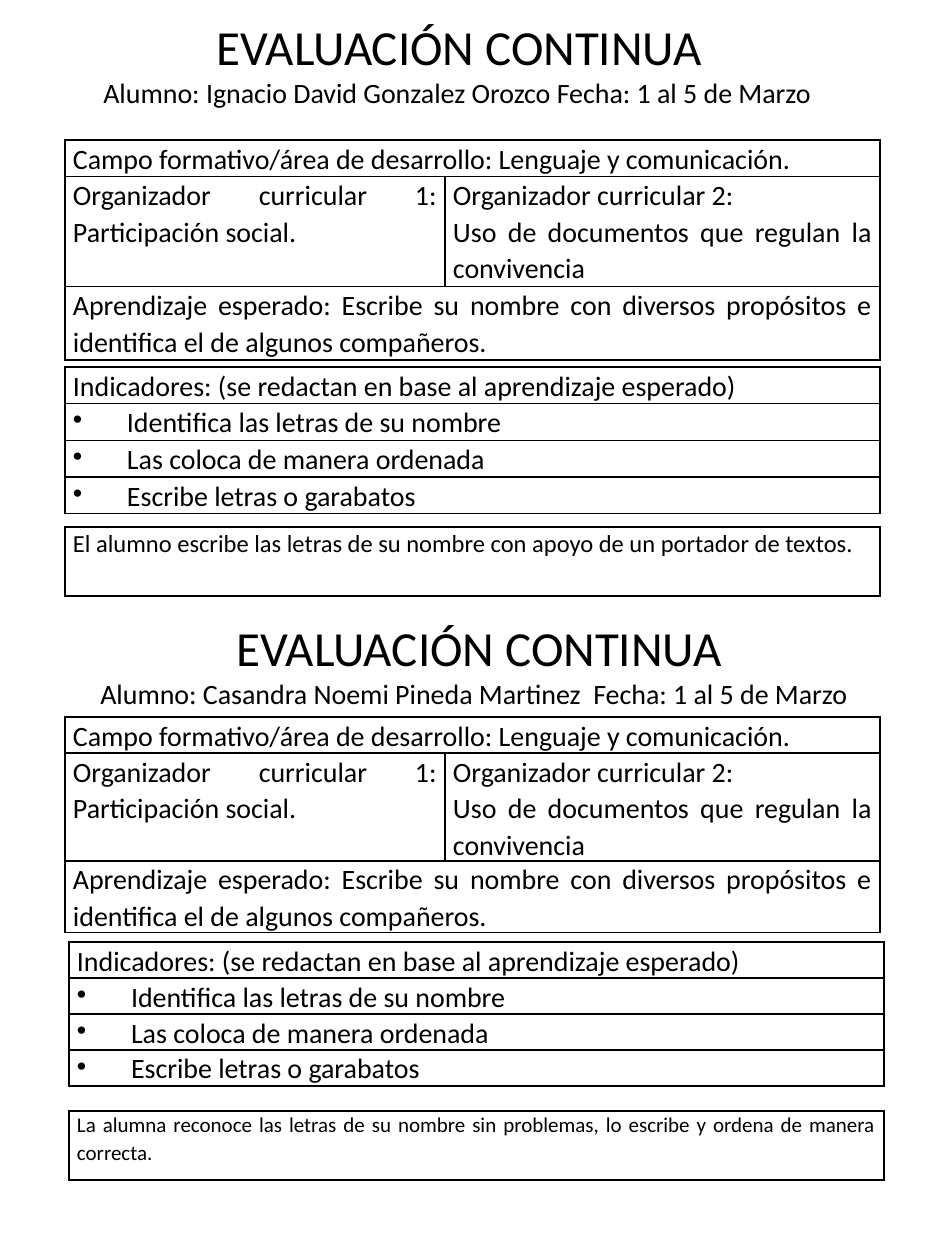
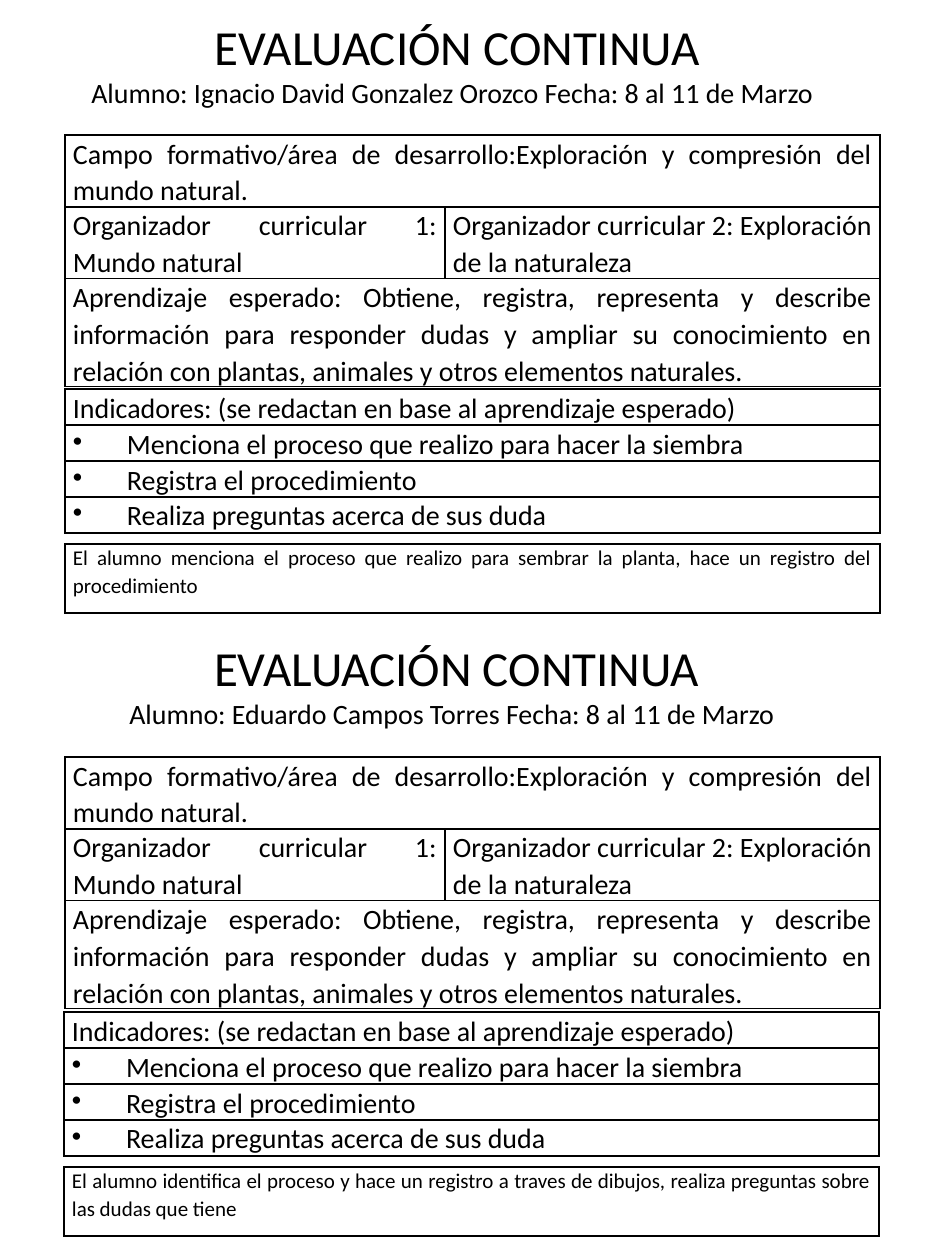
from dataclasses import dataclass

from lxml.etree import SubElement
from pptx import Presentation
from pptx.dml.color import RGBColor
from pptx.enum.text import MSO_ANCHOR, PP_ALIGN
from pptx.oxml import parse_xml
from pptx.oxml.ns import nsdecls, qn
from pptx.util import Pt

PX = 7257.14
BLACK = RGBColor(0, 0, 0)
FONT = "Calibri"
TITLE = "EVALUACIÓN CONTINUA"
TITLE_HEIGHT = 144
COLUMNS = [380, 435]
TABLE_WIDTH = sum(COLUMNS)
FIELD_LEFT = 65
FIELD_ROW, INDICATOR_ROW, NOTE_ROW = 21, 23, 69
INDICATOR_HEIGHT = 137
CELL_MARGIN = 8
BULLET_INDENT = 54
INDICATOR_HEADING = "Indicadores: (se redactan en base al aprendizaje esperado)"


@dataclass
class Lesson:
    """The wording shared by the evaluations of one week."""

    field: str
    organizers: list
    learning: str
    indicators: list
    field_height: int
    dates: str


@dataclass
class Evaluation:
    """One pupil's sheet and the places of its parts."""

    pupil: str
    note: str
    note_size: int
    title_box: tuple
    field_top: int
    indicator_at: tuple
    note_top: int


LANGUAGE = Lesson(
    "Campo formativo/área de desarrollo: Lenguaje y comunicación. ",
    [
        "Organizador curricular 1: Participación social.",
        "Organizador curricular 2:\nUso de documentos que regulan la convivencia",
    ],
    "Aprendizaje esperado: Escribe su nombre con diversos propósitos e "
    "identifica el de algunos compañeros.",
    [
        "Identifica las letras de su nombre",
        "Las coloca de manera ordenada",
        "Escribe letras o garabatos",
    ],
    210,
    "Fecha: 1 al 5 de Marzo",
)
NATURE = Lesson(
    "Campo formativo/área de desarrollo:Exploración y compresión del mundo natural. ",
    [
        "Organizador curricular 1: Mundo natural",
        "Organizador curricular 2: Exploración de la naturaleza",
    ],
    "Aprendizaje esperado: Obtiene, registra, representa y describe información "
    "para responder dudas y ampliar su conocimiento en relación con plantas, "
    "animales y otros elementos naturales. ",
    [
        "Menciona el proceso que realizo para hacer la siembra",
        "Registra el procedimiento",
        "Realiza preguntas acerca de sus duda",
    ],
    247,
    "Fecha: 8 al 11 de Marzo",
)
SHEETS = [
    (LANGUAGE, [
        Evaluation(
            "Ignacio David Gonzalez Orozco ",
            "El alumno escribe las letras de su nombre con apoyo de un portador de textos.",
            14, (91, 10, 736), 140, (65, 367), 527,
        ),
        Evaluation(
            "Casandra Noemi Pineda Martinez  ",
            "La alumna reconoce las letras de su nombre sin problemas, lo escribe y "
            "ordena de manera correcta. ",
            12, (88, 611, 782), 717, (69, 942), 1111,
        ),
    ]),
    (NATURE, [
        Evaluation(
            "Ignacio David Gonzalez Orozco ",
            "El alumno menciona el proceso que realizo para sembrar la planta, hace "
            "un registro del procedimiento",
            12, (79, 10, 756), 135, (65, 389), 544,
        ),
        Evaluation(
            "Eduardo Campos Torres ",
            "El alumno identifica el proceso y hace un registro a traves de dibujos, "
            "realiza preguntas sobre las dudas que tiene",
            12, (117, 631, 679), 757, (64, 1012), 1167,
        ),
    ]),
]


def px(length):
    """Turn pixels into EMU."""
    return round(length * PX)


def format_runs(paragraph, size):
    """Give every run of a paragraph the common font."""
    for run in paragraph.runs:
        run.font.name = FONT
        run.font.size = Pt(size)
        run.font.color.rgb = BLACK


def add_borders(cell):
    """Draw a thin black line on each side of a cell."""
    properties = cell._tc.get_or_add_tcPr()
    for index, side in enumerate(("lnL", "lnR", "lnT", "lnB")):
        line = parse_xml(
            f'<a:{side} {nsdecls("a")} w="12700"><a:solidFill>'
            f'<a:srgbClr val="{BLACK}"/></a:solidFill></a:{side}>'
        )
        properties.insert(index, line)


def add_bullet(paragraph):
    """Put a hanging bullet before a paragraph."""
    properties = paragraph._p.get_or_add_pPr()
    properties.set("marL", str(px(BULLET_INDENT)))
    properties.set("indent", str(-px(BULLET_INDENT)))
    SubElement(properties, qn("a:buChar"), char="•")


def fill_cell(cell, text, size=16):
    """Write justified text in a cell."""
    cell.text_frame.text = text
    for paragraph in cell.text_frame.paragraphs:
        paragraph.alignment = PP_ALIGN.JUSTIFY
        paragraph.line_spacing = 1.07
        format_runs(paragraph, size)


def add_grid(slide, left, top, height, columns, row_count, row_height):
    """Add an unfilled table with black borders."""
    frame = slide.shapes.add_table(
        row_count, len(columns), px(left), px(top), px(TABLE_WIDTH), px(height)
    )
    table = frame.table
    table.first_row = table.horz_banding = False
    for column, width in zip(table.columns, columns):
        column.width = px(width)
    for row in table.rows:
        row.height = px(row_height)
    frame.height = px(height)
    for cell in table.iter_cells():
        cell.margin_left = cell.margin_right = px(CELL_MARGIN)
        cell.margin_top = cell.margin_bottom = 0
        cell.fill.background()
        add_borders(cell)
    return table


def add_heading(slide, box, pupil_line):
    """Add the sheet title with the pupil and the dates below."""
    left, top, width = box
    shape = slide.shapes.add_textbox(px(left), px(top), px(width), px(TITLE_HEIGHT))
    text_frame = shape.text_frame
    text_frame.word_wrap = False
    text_frame.vertical_anchor = MSO_ANCHOR.TOP
    text_frame.text = f"{TITLE}\n{pupil_line}"
    title, pupil = text_frame.paragraphs
    title.alignment = PP_ALIGN.CENTER
    format_runs(title, 28)
    format_runs(pupil, 16)


def add_field_table(slide, lesson, top):
    """Add the table of field, organizers and expected learning."""
    table = add_grid(
        slide, FIELD_LEFT, top, lesson.field_height, COLUMNS, 3, FIELD_ROW
    )
    for row, text in ((0, lesson.field), (2, lesson.learning)):
        table.cell(row, 0).merge(table.cell(row, 1))
        fill_cell(table.cell(row, 0), text)
    for column, text in enumerate(lesson.organizers):
        fill_cell(table.cell(1, column), text)


def add_indicator_table(slide, indicators, left, top):
    """Add the table of bulleted indicators."""
    table = add_grid(
        slide, left, top, INDICATOR_HEIGHT, [TABLE_WIDTH],
        len(indicators) + 1, INDICATOR_ROW,
    )
    fill_cell(table.cell(0, 0), INDICATOR_HEADING)
    for row, text in enumerate(indicators, 1):
        cell = table.cell(row, 0)
        fill_cell(cell, text)
        add_bullet(cell.text_frame.paragraphs[0])


def add_note(slide, text, size, left, top):
    """Add the framed remark on the pupil."""
    table = add_grid(slide, left, top, NOTE_ROW, [TABLE_WIDTH], 1, NOTE_ROW)
    fill_cell(table.cell(0, 0), text, size)


def add_evaluation(slide, lesson, evaluation):
    """Add one complete evaluation sheet."""
    left, top = evaluation.indicator_at
    add_field_table(slide, lesson, evaluation.field_top)
    add_indicator_table(slide, lesson.indicators, left, top)
    add_note(slide, evaluation.note, evaluation.note_size, left, evaluation.note_top)
    add_heading(
        slide, evaluation.title_box, f"Alumno: {evaluation.pupil}{lesson.dates}"
    )


def main():
    """Build the slides and save them."""
    presentation = Presentation()
    presentation.slide_width = px(945)
    presentation.slide_height = px(1260)
    for lesson, evaluations in SHEETS:
        slide = presentation.slides.add_slide(presentation.slide_layouts[6])
        for evaluation in evaluations:
            add_evaluation(slide, lesson, evaluation)
    presentation.save("out.pptx")


if __name__ == "__main__":
    main()
